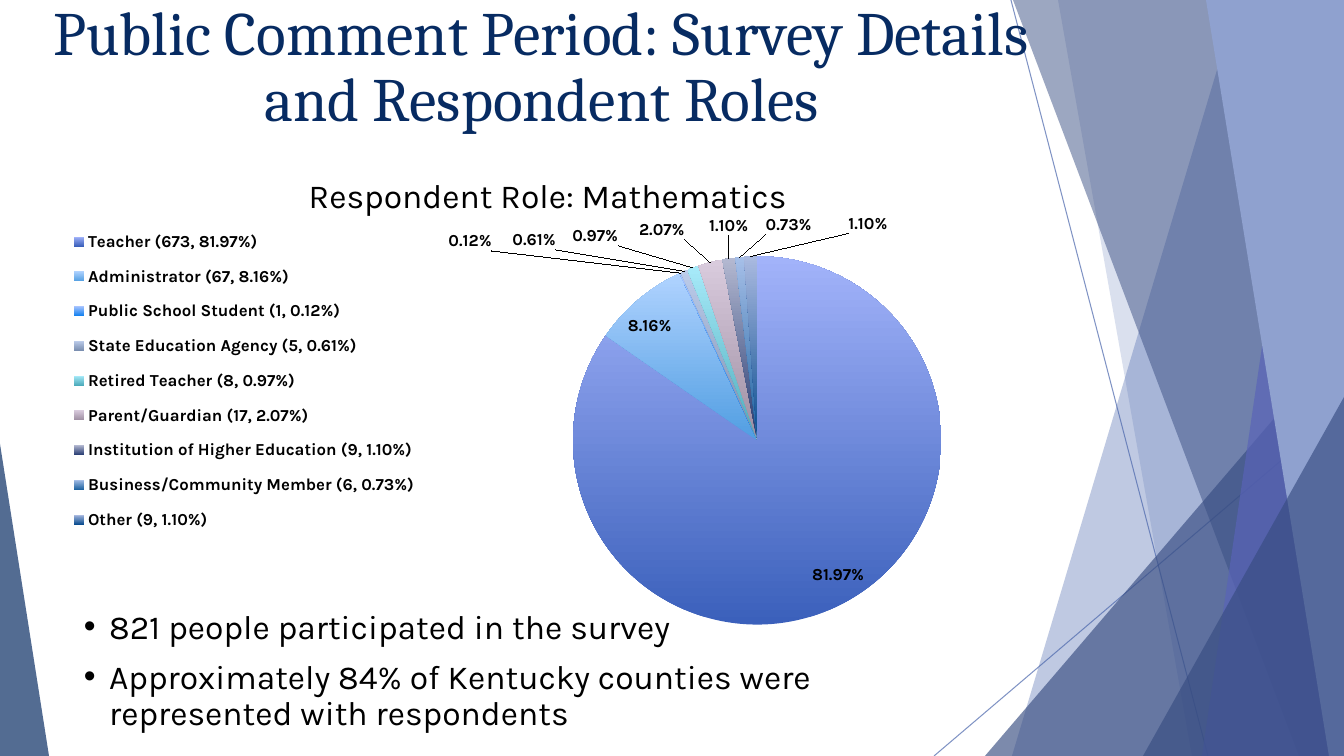
import copy
import math
from dataclasses import dataclass
from typing import Any

from lxml import etree
from pptx import Presentation
from pptx import util as u
from pptx.chart import data as chart_data
from pptx.dml import color as dml
from pptx.enum import chart as charts, shapes, text
from pptx.oxml import ns

SCALE = 914400 / 100.8
WIDTH, HEIGHT = 1344, 756
CHART_LEFT, CHART_TOP, CHART_WIDTH, CHART_HEIGHT = 29, 143, 1025, 506
PIE_X, PIE_Y, PIE_RADIUS = 756, 441, 184
NAVY, BLACK, BLUE, DEEP_BLUE = "072B62", "000000", "4A66AC", "374C81"


@dataclass
class Ray:
    start: tuple[int, int]
    end: tuple[int, int]


@dataclass
class Facet:
    top_x: int
    bottom_x: int
    color: str
    opacity: int


@dataclass
class Corner:
    left: int
    top: int
    width: int
    apex: int
    color: str
    opacity: int


@dataclass
class Role:
    name: str
    share: float
    dark: str
    light: str
    label_at: tuple[int, int] | None = None


RAYS = [Ray((1011, 0), (1208, HEIGHT)), Ray((WIDTH, 407), (934, HEIGHT))]
DECORATION = [
    Facet(1238, 1012, BLUE, 35),
    Facet(1058, 1192, BLUE, 20),
    Corner(985, 337, 359, 1, DEEP_BLUE, 65),
    Facet(1013, 1299, DEEP_BLUE, 49),
    Facet(1313, 1202, "5963B8", 69),
    Facet(1206, 1329, "8FA1CF", 100),
    Corner(1143, 397, 201, 1, DEEP_BLUE, 65),
    Corner(0, 444, 49, 0, NAVY, 69),
]
ROLES = [
    Role("Teacher (673, 81.97%)", 0.8197, "3B60BB", "A2B3FA"),
    Role("Administrator (67, 8.16%)", 0.0816, "519EE2", "B0D3FF"),
    Role("Public School Student (1, 0.12%)", 0.0012, "0F7FEF", "AAC5FF", (493, 257)),
    Role("State Education Agency (5, 0.61%)", 0.0061, "798DAF", "BCCCEA", (557, 256)),
    Role("Retired Teacher (8, 0.97%)", 0.0097, "4DABBB", "A7EAF9", (619, 252)),
    Role("Parent/Guardian (17, 2.07%)", 0.0207, "9E8EA2", "D9CBDD", (685, 246)),
    Role("Institution of Higher Education (9, 1.10%)", 0.011, "243970", "B4B9D1", (748, 242)),
    Role("Business/Community Member (6, 0.73%)", 0.0073, "1B609E", "A6BFE8", (811, 241)),
    Role("Other (9, 1.10%)", 0.011, "094C8F", "AABAE0", (867, 240)),
]
FINDINGS = [
    "821 people participated in the survey",
    "Approximately 84% of Kentucky counties were represented with respondents",
]


def px(value: float) -> int:
    return round(value * SCALE)


def rgb(value: str) -> dml.RGBColor:
    return dml.RGBColor.from_string(value)


def style(font: Any, face: str, size: int, color: str, bold: bool = False) -> None:
    font.name, font.size, font.bold = face, u.Pt(size), bold
    font.color.rgb = rgb(color)


def fade(shape: Any, opacity: int) -> None:
    color = shape._element.spPr.find(".//" + ns.qn("a:srgbClr"))
    etree.SubElement(color, ns.qn("a:alpha"), val=str(opacity * 1000))


def paint(shape: Any, color: str, opacity: int) -> None:
    shape.shadow.inherit = False
    shape.fill.solid()
    shape.fill.fore_color.rgb = rgb(color)
    shape.line.fill.background()
    if opacity < 100:
        fade(shape, opacity)


def draw_ray(page: Any, ray: Ray) -> None:
    line = page.shapes.add_connector(
        shapes.MSO_CONNECTOR.STRAIGHT, *map(px, ray.start + ray.end))
    line.line.color.rgb = rgb(BLUE)
    line.line.width = u.Pt(0.75)
    fade(line, 69)
    etree.SubElement(line._element.spPr, ns.qn("a:effectLst"))


def draw_facet(page: Any, facet: Facet) -> None:
    outline = page.shapes.build_freeform(px(facet.top_x), 0)
    corners = [(WIDTH, 0), (WIDTH, HEIGHT), (facet.bottom_x, HEIGHT)]
    outline.add_line_segments([(px(x), px(y)) for x, y in corners], close=True)
    paint(outline.convert_to_shape(), facet.color, facet.opacity)


def draw_corner(page: Any, corner: Corner) -> None:
    shape = page.shapes.add_shape(
        shapes.MSO_SHAPE.ISOSCELES_TRIANGLE, px(corner.left), px(corner.top),
        px(corner.width), px(HEIGHT - corner.top))
    shape.adjustments[0] = corner.apex
    paint(shape, corner.color, corner.opacity)


def add_bullet(para: Any, color: str) -> None:
    properties = para._p.get_or_add_pPr()
    properties.set("marL", str(u.Inches(0.25)))
    properties.set("indent", str(-u.Inches(0.25)))
    tint = etree.SubElement(properties, ns.qn("a:buClr"))
    etree.SubElement(tint, ns.qn("a:srgbClr"), val=color)
    etree.SubElement(properties, ns.qn("a:buFont"), typeface="Arial")
    etree.SubElement(properties, ns.qn("a:buChar"), char="•")


def write(page: Any, lines: list[str], *, at: tuple[int, int, int, int], face: str,
          size: int, color: str, align: Any = text.PP_ALIGN.LEFT,
          anchor: Any = text.MSO_ANCHOR.TOP, bullets: bool = False,
          gap: int = 0) -> None:
    frame = page.shapes.add_textbox(*map(px, at)).text_frame
    frame.word_wrap = True
    frame.vertical_anchor = anchor
    for index, line in enumerate(lines):
        para = frame.add_paragraph() if index else frame.paragraphs[0]
        if bullets:
            add_bullet(para, color)
        para.alignment = align
        para.line_spacing = 0.9
        if index:
            para.space_before = u.Pt(gap)
        span = para.add_run()
        span.text = line
        style(span.font, face, size, color)


def place(element: Any, index: int, **settings: Any) -> None:
    for old in element.findall(ns.qn("c:layout")):
        element.remove(old)
    layout = etree.Element(ns.qn("c:layout"))
    manual = etree.SubElement(layout, ns.qn("c:manualLayout"))
    for name, value in settings.items():
        etree.SubElement(manual, ns.qn(f"c:{name}"), val=str(value))
    element.insert(index, layout)


def label_slices(series: Any) -> None:
    labels = series.data_labels
    labels.show_value = True
    labels.number_format, labels.number_format_is_linked = "0.00%", False
    labels.position = charts.XL_LABEL_POSITION.BEST_FIT
    style(labels.font, "Karla", 12, BLACK, True)
    number_format = labels._element.find(ns.qn("c:numFmt"))
    total, passed = sum(role.share for role in ROLES), 0.0
    offsets = []
    for index, role in enumerate(ROLES):
        angle = math.tau * (passed + role.share / 2) / total
        passed += role.share
        if role.label_at:
            label = series.points[index].data_label
            style(label.font, "Karla", 12, BLACK, True)
            label.position = charts.XL_LABEL_POSITION.BEST_FIT
            x = role.label_at[0] - PIE_X - PIE_RADIUS * math.sin(angle)
            y = role.label_at[1] - PIE_Y + PIE_RADIUS * math.cos(angle)
            offsets.append((x / CHART_WIDTH, y / CHART_HEIGHT))
    for element, (x, y) in zip(labels._element.findall(ns.qn("c:dLbl")), offsets):
        place(element, 1, x=round(x, 4), y=round(y, 4))
        element.insert(2, copy.deepcopy(number_format))


def draw_chart(page: Any) -> None:
    values = chart_data.CategoryChartData(number_format="0.00%")
    values.categories = [role.name for role in ROLES]
    values.add_series("Series 1", [role.share for role in ROLES])
    bounds = map(px, (CHART_LEFT, CHART_TOP, CHART_WIDTH, CHART_HEIGHT))
    chart = page.shapes.add_chart(charts.XL_CHART_TYPE.PIE, *bounds, values).chart
    style(chart.font, "Arial", 10, BLACK)
    chart.has_title = chart.has_legend = True
    title = chart.chart_title.text_frame
    title.text = "Respondent Role: Mathematics"
    style(title.paragraphs[0].runs[0].font, "Karla", 24, BLACK)
    chart.legend.position = charts.XL_LEGEND_POSITION.LEFT
    chart.legend.include_in_layout = False
    style(chart.legend.font, "Karla", 12, BLACK, True)
    series = chart.plots[0].series[0]
    for index, role in enumerate(ROLES):
        fill = series.points[index].format.fill
        fill.gradient()
        fill.gradient_angle = 90
        for stop, color in zip(fill.gradient_stops, (role.dark, role.light)):
            stop.color.rgb = rgb(color)
    label_slices(series)
    edges = {"xMode": "edge", "yMode": "edge"}
    place(chart.chart_title._element, 1, **edges, x=0.267, y=0.05)
    place(chart.legend._element, 1, **edges, x=0.025, y=0.146, w=0.37, h=0.648)
    plot_area = chart._chartSpace.find(".//" + ns.qn("c:plotArea"))
    place(plot_area, 0, layoutTarget="inner", **edges, x=0.43, y=0.224, w=0.561, h=0.728)


def main() -> None:
    deck = Presentation()
    deck.slide_width, deck.slide_height = px(WIDTH), px(HEIGHT)
    page = deck.slides.add_slide(deck.slide_layouts[6])
    for ray in RAYS:
        draw_ray(page, ray)
    for part in DECORATION:
        if isinstance(part, Facet):
            draw_facet(page, part)
        else:
            draw_corner(page, part)
    draw_chart(page)
    write(page, ["Public Comment Period: Survey Details and Respondent Roles"],
          at=(0, 0, 1083, 137), face="Cambria", size=44, color=NAVY,
          align=text.PP_ALIGN.CENTER, anchor=text.MSO_ANCHOR.MIDDLE)
    write(page, FINDINGS, at=(74, 605, 890, 134), face="Karla", size=24,
          color=BLACK, bullets=True, gap=10)
    deck.save("out.pptx")


if __name__ == "__main__":
    main()
